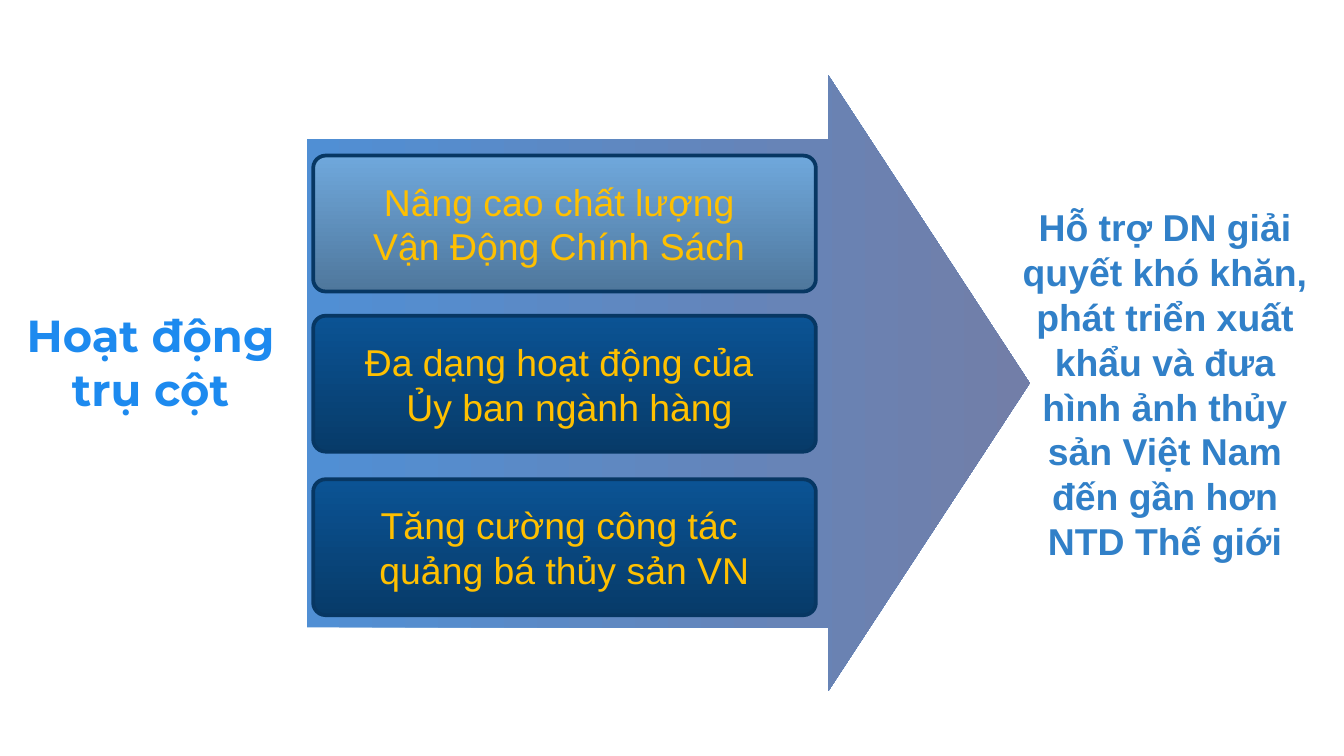
from dataclasses import dataclass

from lxml.etree import SubElement
from pptx import Presentation
from pptx.dml.color import RGBColor
from pptx.enum.shapes import MSO_SHAPE
from pptx.enum.text import MSO_ANCHOR, PP_ALIGN
from pptx.oxml.ns import qn
from pptx.util import Pt


@dataclass(frozen=True)
class Theme:
    """Colours, fonts and type sizes of the slide."""

    title_colour: str = "1D8AEF"
    title_font: str = "Montserrat"
    title_size: int = 24
    body_font: str = "Arial"
    body_size: int = 20
    pillar_text: str = "FFC000"
    pillar_line: str = "073763"
    pillar_light: str = "6FA8DC"
    pillar_dark: str = "0B5394"
    pillar_shade: int = 46000
    arrow_start: str = "508FD4"
    arrow_end: str = "727EA8"
    outcome_text: str = "3180C8"


THEME = Theme()

PILLARS = [
    (83.4, THEME.pillar_light, ["Nâng cao chất lượng ", "Vận Động Chính Sách "]),
    (169.2, THEME.pillar_dark, ["Đa dạng hoạt động của ", " Ủy ban ngành hàng"]),
    (256.8, THEME.pillar_dark, ["Tăng cường công tác ", "quảng bá thủy sản VN"]),
]
OUTCOME = (
    "Hỗ trợ DN giải quyết khó khăn, phát triển xuất khẩu và đưa "
    "hình ảnh thủy sản Việt Nam đến gần hơn NTD Thế giới"
)


def write_lines(frame, lines, font, size, colour, bold=False):
    """Write each line as a centred paragraph with one run."""
    for index, line in enumerate(lines):
        para = frame.paragraphs[0] if index == 0 else frame.add_paragraph()
        para.alignment = PP_ALIGN.CENTER
        span = para.add_run()
        span.text = line
        span.font.name = font
        span.font.size = Pt(size)
        span.font.bold = bold
        span.font.color.rgb = RGBColor.from_string(colour)


def fill_gradient(shape, colours, angle):
    """Fill a shape with a two-colour linear gradient."""
    shape.fill.gradient()
    shape.fill.gradient_angle = angle
    for stop, colour in zip(shape.fill.gradient_stops, colours):
        stop.color.rgb = RGBColor.from_string(colour)


def shade_last_stop(shape, amount):
    """Darken the last gradient stop of a shape."""
    colour = shape.element.xpath(".//a:gs[last()]/a:srgbClr")[0]
    SubElement(colour, qn("a:shade"), val=str(amount))


def add_preset(page, kind, bounds, adjustments):
    """Add a preset shape without shadow."""
    shape = page.shapes.add_shape(kind, *map(Pt, bounds))
    shape.shadow.inherit = False
    for index, value in enumerate(adjustments):
        shape.adjustments[index] = value
    return shape


def add_title(page):
    """Add the heading on the left."""
    box = page.shapes.add_textbox(Pt(0), Pt(157.7), Pt(161.3), Pt(98.6))
    frame = box.text_frame
    frame.word_wrap = True
    frame.margin_left = frame.margin_right = Pt(7.2)
    frame.margin_top = frame.margin_bottom = Pt(7.2)
    write_lines(frame, ["Hoạt động trụ cột"], THEME.title_font,
                THEME.title_size, THEME.title_colour, bold=True)


def add_arrow(page):
    """Add the large arrow behind the pillars."""
    arrow = add_preset(page, MSO_SHAPE.RIGHT_ARROW,
                       (164.2, 40.4, 387.4, 329.8), (0.793, 0.327))
    fill_gradient(arrow, (THEME.arrow_start, THEME.arrow_end), 0)
    arrow.line.fill.background()


def add_pillar(page, top, colour, lines):
    """Add one rounded pillar box."""
    box = add_preset(page, MSO_SHAPE.ROUNDED_RECTANGLE,
                     (167.8, top, 269.3, 72.8), (0.091,))
    fill_gradient(box, (colour, colour), 270)
    shade_last_stop(box, THEME.pillar_shade)
    box.line.color.rgb = RGBColor.from_string(THEME.pillar_line)
    box.line.width = Pt(2)
    frame = box.text_frame
    frame.word_wrap = False
    frame.vertical_anchor = MSO_ANCHOR.MIDDLE
    write_lines(frame, lines, THEME.body_font, THEME.body_size, THEME.pillar_text)


def add_outcome(page):
    """Add the outcome statement on the right."""
    box = add_preset(page, MSO_SHAPE.ROUNDED_RECTANGLE,
                     (534.2, 106.6, 180, 198), (0.091,))
    box.fill.background()
    box.line.fill.background()
    frame = box.text_frame
    frame.word_wrap = True
    frame.vertical_anchor = MSO_ANCHOR.MIDDLE
    write_lines(frame, [OUTCOME], THEME.body_font, THEME.body_size,
                THEME.outcome_text, bold=True)


def main():
    """Build the slide and save the deck."""
    deck = Presentation()
    deck.slide_width, deck.slide_height = Pt(720), Pt(405)
    page = deck.slides.add_slide(deck.slide_layouts[6])
    add_title(page)
    add_arrow(page)
    for top, colour, lines in PILLARS:
        add_pillar(page, top, colour, lines)
    add_outcome(page)
    deck.save("out.pptx")


if __name__ == "__main__":
    main()
